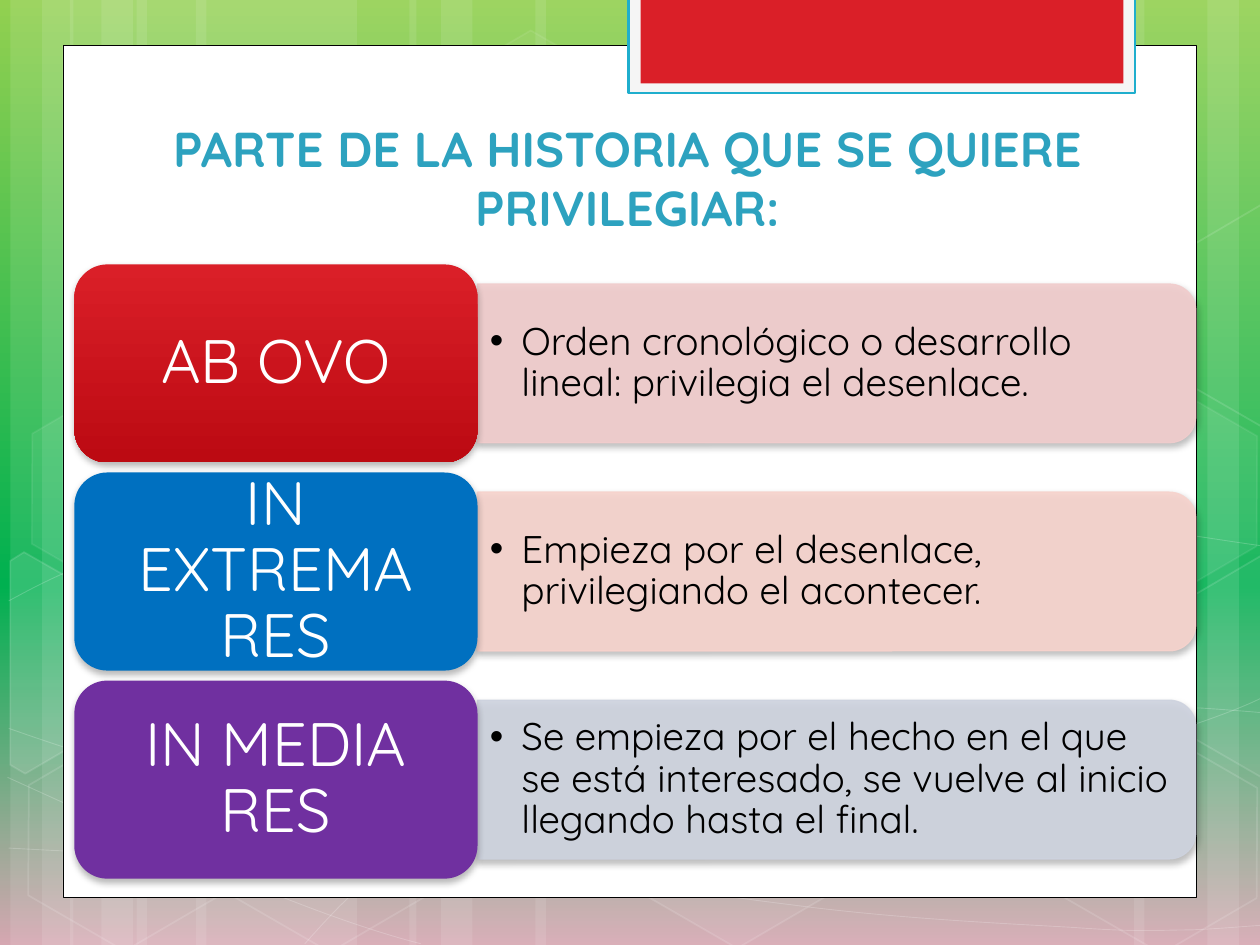
import math

from lxml import etree
from pptx import Presentation
from pptx.dml.color import RGBColor
from pptx.enum import shapes, text
from pptx.oxml import ns
from pptx.util import Pt

FONT = "Quicksand"
WHITE = RGBColor(0xFF, 0xFF, 0xFF)
BLACK = RGBColor(0, 0, 0)
LIME = RGBColor(0x92, 0xD0, 0x50)
GREEN = RGBColor(0x00, 0xB0, 0x50)
ROSE = RGBColor(0xD5, 0xA7, 0xB1)
OFF_WHITE = RGBColor(0xF5, 0xF5, 0xF5)
CYAN = RGBColor(0x1F, 0xAE, 0xCD)
TITLE_BLUE = RGBColor(0x2D, 0xA2, 0xBF)
RED = RGBColor(0xDA, 0x1F, 0x28)
DARK_RED = RGBColor(0xBC, 0x0A, 0x12)
BLUE = RGBColor(0x00, 0x70, 0xC0)
PURPLE = RGBColor(0x70, 0x30, 0xA0)
PINK = RGBColor(0xF1, 0xCD, 0xCD)
PEACH = RGBColor(0xF7, 0xD3, 0xCD)
GREY_BLUE = RGBColor(0xCE, 0xD3, 0xDF)

STRIPES = [(78, 126), (6, 36), (24, 60), (112, 126), (40, 36), (58, 60),
           (528, 126), (690, 36), (648, 60), (306, 222), (234, 36), (252, 60)]
CURVES = [
    [(5, 484.6), (44, 486.7), (83, 488.9), (137, 488.2), (191, 487.4), (258, 486), (330, 478.8),
     (402, 471.6), (504, 458), (570, 444.2), (636, 430.6), (703, 409), (725, 396.7)],
    [(5, 343.4), (26, 332), (47, 321), (87, 310.3), (128, 299.5), (186.5, 283.7), (250, 278.6),
     (314, 273.6), (392, 273), (471, 278.6), (550, 284.4), (682, 306.7), (725, 312.5)],
    [(4.3, 444.2), (91.4, 483.8), (178, 523.4), (240.5, 539.3)],
    [(5, 416.2), (27.4, 424), (50.4, 432), (92, 443.5), (134, 454.3), (196.6, 472.3), (257, 484.6),
     (317, 496.8), (392.4, 509.8), (452, 517), (512, 525), (576, 527.8), (614, 530),
     (651.6, 532.8), (661.7, 531.4), (680.4, 531.4), (699, 530.6), (712, 529.2), (725, 528.5)],
    [(174.2, 539.3), (187, 525), (200, 510.5), (217.4, 497.5), (234.7, 484.6), (259, 470.2),
     (279.4, 460), (299.5, 450), (311.8, 445.7), (338.4, 438.5), (364.3, 431.3), (412.6, 421.2),
     (437.8, 416.2), (463.7, 411), (467.3, 411), (489.6, 409.7), (512, 407.5), (547.2, 405.4),
     (571.7, 404.6), (597, 404), (638, 404.6), (638, 404.6), (654, 404.6), (670, 404.6),
     (686.2, 404.6), (699, 405.4), (712, 406.5), (724.3, 407.5)],
]
HEXAGONS = [(240.5, 26, 4, 8), (358, 424, 6, 12), (8, 425.5, 0, 12), (10, 224.6, 7, 8),
            (125.3, 426.2, 0, 12), (542.2, 326.2, 10, 12), (600.5, 427, 0, 12), (600.5, 226, 7, 8)]
LEFT_PIECE = [(5.8, 320.4), (13.7, 315.4), (69, 347), (68.4, 410.4), (14.4, 442), (5.8, 437)]
RIGHT_PIECE = [(666.7, 349.2), (720.7, 317.5), (726.5, 321), (726.5, 441.4), (721.4, 444.2),
               (666.7, 412.6)]
TILT = 30
ROWS = [
    ("AB OVO", "Orden cronológico o desarrollo lineal: privilegia el desenlace.",
     (RED, DARK_RED), PINK),
    ("IN EXTREMA RES", "Empieza por el desenlace, privilegiando el acontecer.", (BLUE,), PEACH),
    ("IN MEDIA RES", "Se empieza por el hecho en el que se está interesado, se vuelve al inicio "
     "llegando hasta el final.", (PURPLE,), GREY_BLUE),
]


def add_element(parent, tag, **attributes):
    """Append a drawing element and return it."""
    element = etree.SubElement(parent, ns.qn(tag))
    for name, value in attributes.items():
        element.set(name, str(value))
    return element


def paint(shape, fill=None, line=None, width=1, fill_alpha=100, line_alpha=100):
    """Set fill, line and their opacity, with no shadow."""
    shape.shadow.inherit = False
    for target, color, alpha in ((shape.fill, fill, fill_alpha), (shape.line.fill, line, line_alpha)):
        if color is None:
            target.background()
            continue
        target.solid()
        target.fore_color.rgb = color
        if alpha < 100:
            holder = shape.element.spPr
            if target is not shape.fill:
                holder = holder.find(ns.qn("a:ln"))
            swatch = holder.find(ns.qn("a:solidFill")).find(ns.qn("a:srgbClr"))
            add_element(swatch, "a:alpha", val=alpha * 1000)
    if line is not None:
        shape.line.width = Pt(width)


def paint_gradient(fill, owner, stops):
    """Fill from top to bottom with (percent, colour) stops."""
    fill.gradient()
    fill.gradient_angle = 270
    stop_list = next(owner.iter(ns.qn("a:gsLst")))
    for stop in list(stop_list):
        stop_list.remove(stop)
    for percent, color in stops:
        stop = add_element(stop_list, "a:gs", pos=percent * 1000)
        add_element(stop, "a:srgbClr", val=color)


def add_shadow(shape):
    """Give a shape a soft shadow below it."""
    effects = shape.element.spPr.find(ns.qn("a:effectLst"))
    shadow = add_element(effects, "a:outerShdw", blurRad=Pt(4), dist=Pt(2), dir=5400000,
                         algn="ctr", rotWithShape=0)
    add_element(add_element(shadow, "a:srgbClr", val=BLACK), "a:alpha", val=28000)


def add_box(slide, kind, left, top, width, height):
    """Add a preset shape measured in points."""
    return slide.shapes.add_shape(kind, Pt(left), Pt(top), Pt(width), Pt(height))


def add_outline(slide, points, close):
    """Add a freeform through points."""
    vertices = [(Pt(x), Pt(y)) for x, y in points]
    builder = slide.shapes.build_freeform(*vertices[0])
    builder.add_line_segments(vertices[1:], close=close)
    return builder.convert_to_shape()


def add_curve(slide, points):
    """Add a chain of cubic curves, three points to a curve after the start."""
    shape = add_outline(slide, points, False)
    outline = next(shape.element.iter(ns.qn("a:path")))
    segments = outline.findall(ns.qn("a:lnTo"))
    for start in range(0, len(segments), 3):
        curve = add_element(outline, "a:cubicBezTo")
        for segment in segments[start:start + 3]:
            curve.append(segment[0])
            outline.remove(segment)
    return shape


def add_tilted_piece(slide, points, center):
    """Add a cut hexagon, turned about the centre of its box."""
    cosine, sine = math.cos(math.radians(TILT)), math.sin(math.radians(TILT))
    offsets = [(x - center[0], y - center[1]) for x, y in points]
    upright = [(center[0] + x * cosine + y * sine, center[1] - x * sine + y * cosine)
               for x, y in offsets]
    piece = add_outline(slide, upright, True)
    piece.rotation = TILT
    return piece


def add_backdrop(slide, height):
    """Draw the gradient, stripes, curves and hexagons."""
    paint_gradient(slide.background.fill, slide.element, [(0, LIME), (62, GREEN), (100, ROSE)])
    for left, width in STRIPES:
        stripe = add_box(slide, shapes.MSO_SHAPE.RECTANGLE, left, 0, width, height)
        paint(stripe, WHITE, fill_alpha=10)
    for curve in CURVES:
        paint(add_curve(slide, curve), None, WHITE, 0.5, line_alpha=20)
    for left, top, fill_alpha, line_alpha in HEXAGONS:
        hexagon = add_box(slide, shapes.MSO_SHAPE.HEXAGON, left, top, 126, 109.4)
        hexagon.adjustments[0] = 0.285
        hexagon.rotation = TILT
        paint(hexagon, WHITE if fill_alpha else None, WHITE, 1, fill_alpha, line_alpha)
    upper_piece = [(x, y - 200.5) for x, y in RIGHT_PIECE]
    for points, center, alpha in ((LEFT_PIECE, (25.9, 385.2), 10),
                                  (RIGHT_PIECE, (709.2, 374.4), 4),
                                  (upper_piece, (709.2, 173.9), 0)):
        piece = add_tilted_piece(slide, points, center)
        paint(piece, WHITE if alpha else None, WHITE, 1, alpha, 12)


def add_panel(slide, left, top, width, height):
    """Draw the white panel and the tab that hangs over its top edge."""
    rectangle = shapes.MSO_SHAPE.RECTANGLE
    paint(add_box(slide, rectangle, left, top, width, height), WHITE, BLACK, 0.5)
    paint(add_box(slide, rectangle, left + 323.2, -1.4, 289.6, 54.7), OFF_WHITE, CYAN, 1.25)
    paint(add_box(slide, rectangle, left + 330, -1.4, 276, 49), RED)


def write(shape, words, size, color, anchor, bold=False):
    """Write one paragraph into a shape and return it."""
    frame = shape.text_frame
    frame.text = words
    frame.word_wrap = True
    frame.vertical_anchor = anchor
    paragraph = frame.paragraphs[0]
    font = paragraph.runs[0].font
    font.name, font.size, font.bold = FONT, Pt(size), bold
    font.color.rgb = color
    return paragraph


def add_title(slide, words, left, top, width, height):
    """Place the title in front of the panel."""
    title = slide.shapes.title
    title.element.getparent().append(title.element)
    title.left, title.top, title.width, title.height = Pt(left), Pt(top), Pt(width), Pt(height)
    paragraph = write(title, words, 28, TITLE_BLUE, text.MSO_ANCHOR.BOTTOM, True)
    paragraph.alignment = text.PP_ALIGN.CENTER


def add_row(slide, row, left, top, width, height):
    """Draw a label block and the description bar to its right."""
    label, description, label_colors, bar_color = row
    label_width, bar_height = 230.4, 90.7
    bar_width = width - label_width
    bar_left = left + label_width
    bar = add_box(slide, shapes.MSO_SHAPE.ROUND_2_SAME_RECTANGLE,
                  bar_left + (bar_width - bar_height) / 2, top + (height - bar_width) / 2,
                  bar_height, bar_width)
    bar.rotation = 90
    paint(bar, bar_color, bar_color, 0.75, 90, 90)
    add_shadow(bar)

    text_height = 82
    body = slide.shapes.add_textbox(Pt(bar_left), Pt(top + (height - text_height) / 2),
                                    Pt(bar_width - 4.5), Pt(text_height))
    paragraph = write(body, description, 22, BLACK, text.MSO_ANCHOR.MIDDLE)
    paragraph.level = 1
    paragraph.line_spacing = 0.9
    properties = paragraph._p.get_or_add_pPr()
    properties.set("marL", str(Pt(18)))
    properties.set("indent", str(Pt(-18)))
    add_element(properties, "a:buFont", typeface="Arial")
    add_element(properties, "a:buChar", char="•")

    block = add_box(slide, shapes.MSO_SHAPE.ROUNDED_RECTANGLE, left, top, label_width, height)
    paint(block, label_colors[0])
    if len(label_colors) > 1:
        paint_gradient(block.fill, block.element, zip((0, 100), label_colors))
    add_shadow(block)
    inset = 5.5
    caption = slide.shapes.add_textbox(Pt(left + inset), Pt(top + inset),
                                       Pt(label_width - 2 * inset), Pt(height - 2 * inset))
    frame = caption.text_frame
    frame.margin_left = frame.margin_right = Pt(10.5)
    frame.margin_top = frame.margin_bottom = Pt(5.25)
    paragraph = write(caption, label, 35, WHITE, text.MSO_ANCHOR.MIDDLE)
    paragraph.alignment = text.PP_ALIGN.CENTER
    paragraph.line_spacing = 0.9


def main():
    """Build and save the slide."""
    presentation = Presentation()
    presentation.slide_width, presentation.slide_height = Pt(720), Pt(540)
    slide = presentation.slides.add_slide(presentation.slide_layouts[5])
    add_backdrop(slide, 540)
    add_panel(slide, 36, 25.9, 648, 487)
    add_title(slide, "PARTE DE LA HISTORIA QUE SE QUIERE PRIVILEGIAR:", 82, 48.7, 553, 90)
    for index, row in enumerate(ROWS):
        add_row(slide, row, 42.5, 151.1 + index * 118.9, 640.8, 113.2)
    presentation.save("out.pptx")


if __name__ == "__main__":
    main()
